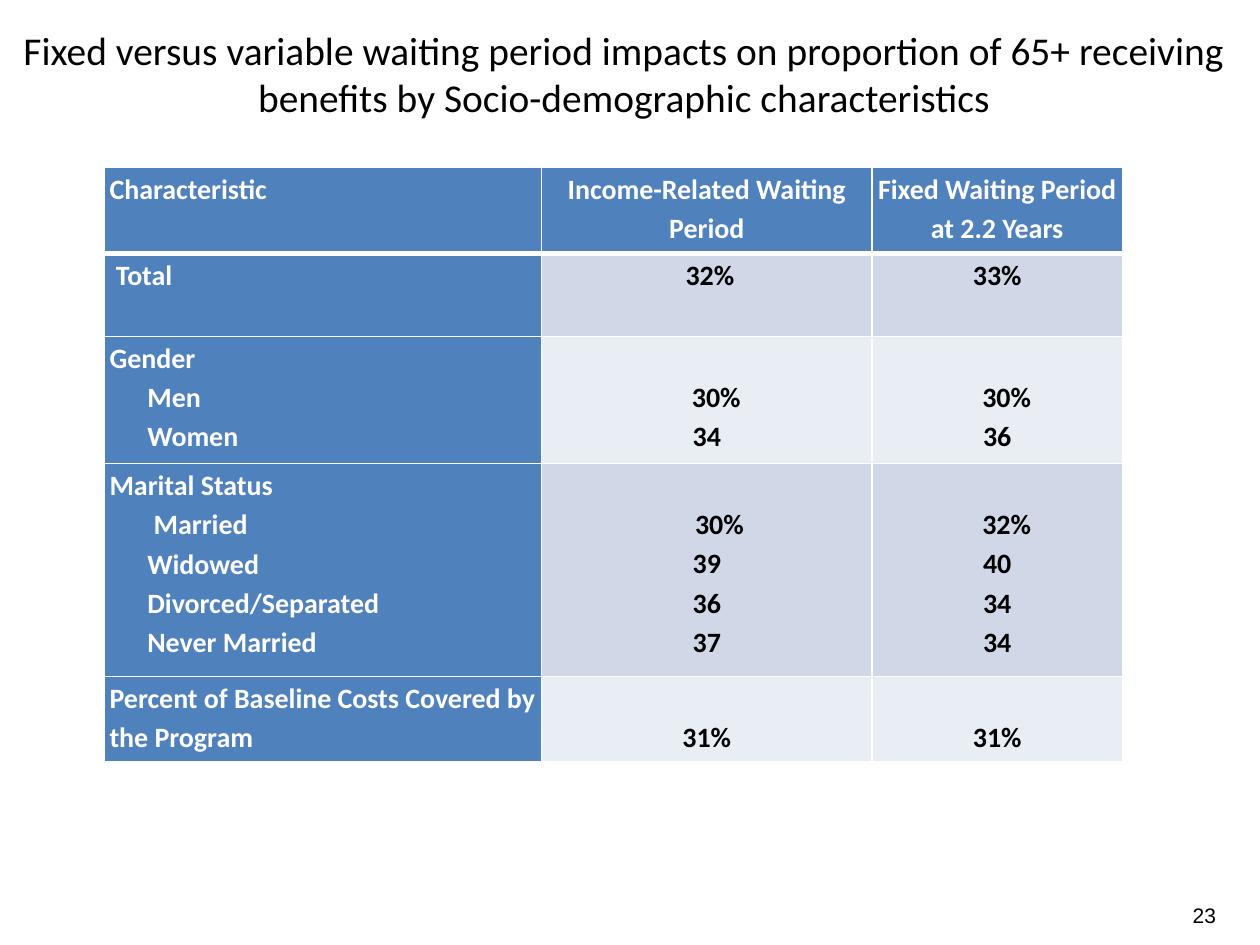
from dataclasses import dataclass

from lxml import etree
from pptx import Presentation
from pptx.dml.color import RGBColor
from pptx.enum import text
from pptx.oxml import ns
from pptx.util import Inches, Pt


@dataclass(frozen=True)
class Theme:
    font: str = "Calibri"
    number_font: str = "Arial"
    title_size: float = 22.5
    table_size: float = 16
    number_size: float = 12
    black: str = "000000"
    white: str = "FFFFFF"
    header: str = "4F81BD"
    bands: tuple = ("D0D8E8", "E9EDF4")
    line: float = 1
    header_line: float = 3


THEME = Theme()
LINE_HEIGHT = 0.31
COLUMN_WIDTHS = (3.47, 2.62, 1.99)
ROW_HEIGHTS = (0.68, 0.66, 1.01, 1.69, 0.68)

# Each cell: lines skipped at the top, then (text, indent) lines.
ROWS = (
    ((0, [("Characteristic", 0)]),
     (0, [("Income-Related Waiting Period", 0)]),
     (0, [("Fixed Waiting Period at 2.2 Years", 0)])),
    ((0, [("Total", 0.05)]),
     (0, [("32%", 0.05)]),
     (0, [("33%", 0)])),
    ((0, [("Gender", 0), ("Men", 0.3), ("Women", 0.3)]),
     (1, [("30%", 0.15), ("34", 0)]),
     (1, [("30%", 0.15), ("36", 0)])),
    ((0, [("Marital Status", 0), ("Married", 0.35), ("Widowed", 0.3),
          ("Divorced/Separated", 0.3), ("Never Married", 0.3)]),
     (1, [("30%", 0.2), ("39", 0), ("36", 0), ("37", 0)]),
     (1, [("32%", 0.15), ("40", 0), ("34", 0), ("34", 0)])),
    ((0, [("Percent of Baseline Costs Covered by the Program", 0)]),
     (1, [("31%", 0)]),
     (1, [("31%", 0)])),
)


def set_font(p, name, size, color, bold=False):
    p.font.name = name
    p.font.size = Pt(size)
    p.font.bold = bold
    p.font.color.rgb = RGBColor.from_string(color)


def add_title(s, title):
    sp = s.shapes.title
    sp.left, sp.top = Inches(0.08), Inches(0.08)
    sp.width, sp.height = Inches(9.75), Inches(1)
    tf = sp.text_frame
    tf.text = title
    tf.word_wrap = True
    tf.auto_size = text.MSO_AUTO_SIZE.NONE
    tf.vertical_anchor = text.MSO_ANCHOR.MIDDLE
    p = tf.paragraphs[0]
    p.alignment = text.PP_ALIGN.CENTER
    set_font(p, THEME.font, THEME.title_size, THEME.black)


def set_borders(cell, top, bottom):
    tcPr = cell._tc.get_or_add_tcPr()
    widths = {"lnL": THEME.line, "lnR": THEME.line, "lnT": top, "lnB": bottom}
    for tag, width in widths.items():
        ln = etree.SubElement(tcPr, ns.qn(f"a:{tag}"), w=str(Pt(width)))
        fill = etree.SubElement(ln, ns.qn("a:solidFill"))
        etree.SubElement(fill, ns.qn("a:srgbClr"), val=THEME.white)


def fill_cell(cell, row, col, skipped, lines):
    is_header = row == 0 or col == 0
    set_borders(cell,
                THEME.header_line if row == 1 else THEME.line,
                THEME.header_line if row == 0 else THEME.line)
    cell.fill.solid()
    cell.fill.fore_color.rgb = RGBColor.from_string(
        THEME.header if is_header else THEME.bands[(row - 1) % 2])
    cell.margin_left = cell.margin_right = Inches(0.04)
    cell.margin_top = Inches(skipped * LINE_HEIGHT)
    cell.margin_bottom = 0
    cell.vertical_anchor = text.MSO_ANCHOR.TOP
    tf = cell.text_frame
    tf.text = "\n".join(line for line, _ in lines)
    for p, (_, indent) in zip(tf.paragraphs, lines):
        if indent:
            p._p.get_or_add_pPr().set("marL", str(Inches(indent)))
        p.alignment = text.PP_ALIGN.CENTER if col else text.PP_ALIGN.LEFT
        p.line_spacing = 1.15
        set_font(p, THEME.font, THEME.table_size,
                 THEME.white if is_header else THEME.black, bold=True)


def add_benefits_table(s):
    table = s.shapes.add_table(
        len(ROWS), len(COLUMN_WIDTHS), Inches(0.83), Inches(1.33),
        Inches(sum(COLUMN_WIDTHS)), Inches(sum(ROW_HEIGHTS))).table
    table.horz_banding = False
    table.first_col = True
    for column, width in zip(table.columns, COLUMN_WIDTHS):
        column.width = Inches(width)
    for row, height in zip(table.rows, ROW_HEIGHTS):
        row.height = Inches(height)
    for i, row in enumerate(ROWS):
        for j, (skipped, lines) in enumerate(row):
            fill_cell(table.cell(i, j), i, j, skipped, lines)


def add_page_number(s, number):
    sp = s.shapes.add_textbox(Inches(7.42), Inches(7.06), Inches(2.33), Inches(0.4))
    tf = sp.text_frame
    tf.text = number
    tf.word_wrap = True
    tf.vertical_anchor = text.MSO_ANCHOR.MIDDLE
    p = tf.paragraphs[0]
    p.alignment = text.PP_ALIGN.RIGHT
    set_font(p, THEME.number_font, THEME.number_size, THEME.black)


def main():
    prs = Presentation()
    prs.slide_width, prs.slide_height = Inches(10), Inches(7.5)
    s = prs.slides.add_slide(prs.slide_layouts[5])
    add_title(s, "Fixed versus variable waiting period impacts on proportion of 65+ "
                 "receiving benefits by Socio-demographic characteristics")
    add_benefits_table(s)
    add_page_number(s, "23")
    prs.save("out.pptx")


if __name__ == "__main__":
    main()
